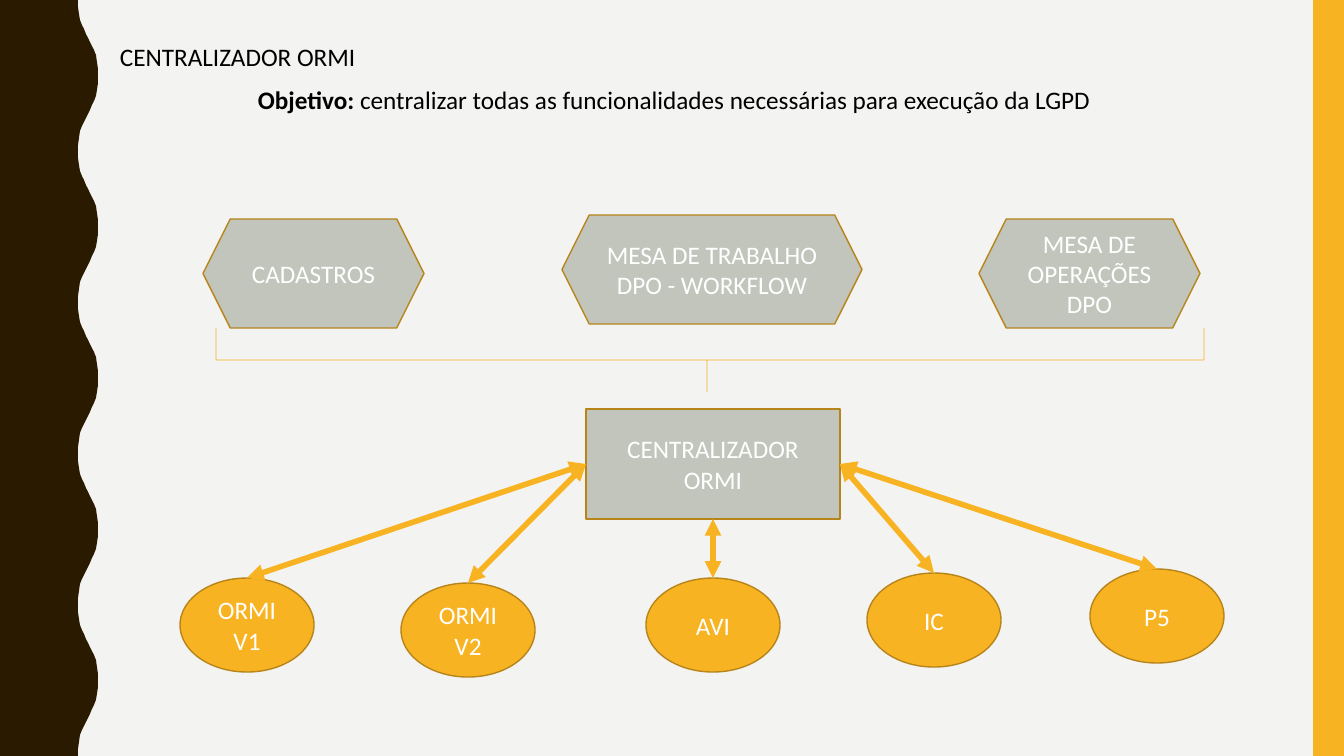
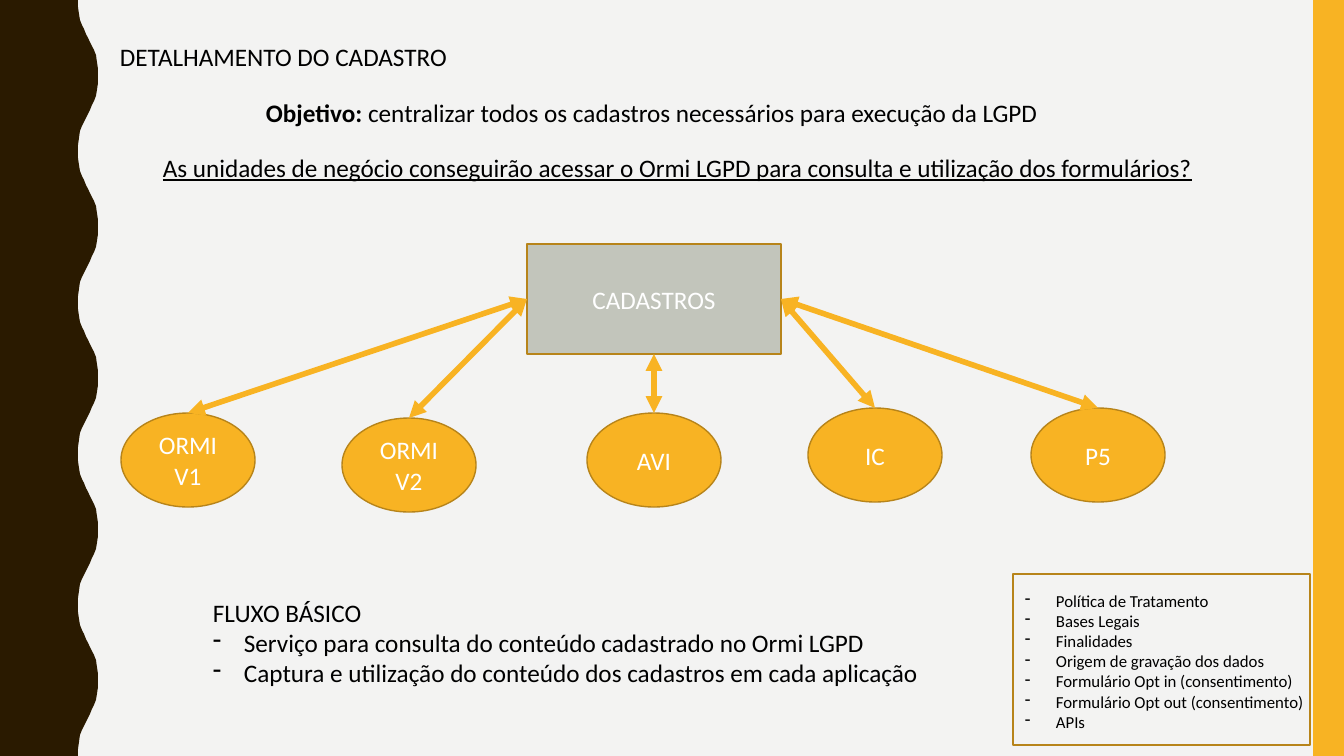
from pptx import Presentation
from pptx.dml.color import RGBColor
from pptx.enum.shapes import MSO_CONNECTOR as CONN, MSO_SHAPE as SHAPE
from pptx.enum.text import MSO_ANCHOR as ANCHOR, PP_ALIGN as ALIGN
from pptx.oxml.ns import qn
from pptx.util import Emu, Pt
from lxml.etree import SubElement

PX = 914400 / 100.8
WIDTH, HEIGHT = 1344, 756
PAPER, BROWN, YELLOW = "F3F3F2", "2A1A00", "F8B323"
GREY, GOLD, WHITE, BLACK = "C2C5BB", "B7841A", "FFFFFF", "000000"
FONT = "Calibri"
WAVE_X = (78, 78, 79, 80, 82, 84, 86, 88, 90, 92, 94, 96, 97, 98)
WAVE_Y = (0, 7, 14, 20, 25, 29, 34, 38, 42, 46, 50, 55, 62, 69)
HALF_WAVES = 10
HUB_W, HUB_H = 254, 110
NODE_W, NODE_H = 134, 94
TOP, LEFT, BOTTOM, RIGHT = range(4)
NODES = (
    ("ORMI V1", -406, 169, LEFT),
    ("ORMI V2", -185, 174, LEFT),
    ("AVI", 60, 169, BOTTOM),
    ("IC", 281, 164, RIGHT),
    ("P5", 504, 164, RIGHT),
)


def px(n):
    return Emu(round(n * PX))


def rgb(color):
    return RGBColor.from_string(color)


def write(tf, text, lead="", size=18, color=BLACK, underline=None, align=ALIGN.LEFT):
    for i, line in enumerate(text.split("\n")):
        p = tf.paragraphs[0] if i == 0 else tf.add_paragraph()
        p.alignment = align
        if line.startswith("- "):
            line = line[2:]
            pPr = p._p.get_or_add_pPr()
            pPr.set("marL", str(px(31)))
            pPr.set("indent", str(px(-31)))
            SubElement(pPr, qn("a:buChar"), char="-")
        for part, bold in ((lead, True), (line, False)):
            if part:
                r = p.add_run()
                r.text = part
                r.font.name = FONT
                r.font.size = Pt(size)
                r.font.bold = bold
                r.font.underline = underline
                r.font.color.rgb = rgb(color)


def paint(sp, fill=None, line=None, width=1):
    sp.shadow.inherit = False
    if fill:
        sp.fill.solid()
        sp.fill.fore_color.rgb = rgb(fill)
    else:
        sp.fill.background()
    if line:
        sp.line.color.rgb = rgb(line)
        sp.line.width = Pt(width)
    else:
        sp.line.fill.background()


def add_shape(s, kind, x, y, w, h, fill=None, line=None, width=1):
    sp = s.shapes.add_shape(kind, px(x), px(y), px(w), px(h))
    paint(sp, fill, line, width)
    return sp


def add_label(s, kind, x, y, w, h, text, fill=GREY):
    sp = add_shape(s, kind, x, y, w, h, fill, GOLD)
    sp.text_frame.word_wrap = True
    sp.text_frame.vertical_anchor = ANCHOR.MIDDLE
    write(sp.text_frame, text, color=WHITE, align=ALIGN.CENTER)
    return sp


def add_text(s, x, y, w, h, text, **fmt):
    tf = s.shapes.add_textbox(px(x), px(y), px(w), px(h)).text_frame
    tf.word_wrap = False
    write(tf, text, **fmt)


def add_double_arrow(s, node, hub, side):
    c = s.shapes.add_connector(CONN.STRAIGHT, 0, 0, 0, 0)
    c.begin_connect(node, TOP)
    c.end_connect(hub, side)
    c.line.color.rgb = rgb(YELLOW)
    c.line.width = Pt(4)
    ln = c.line._get_or_add_ln()
    for end in ("a:headEnd", "a:tailEnd"):
        SubElement(ln, qn(end), type="triangle")
    SubElement(c._element.spPr, qn("a:effectLst"))


def add_wave(s):
    step = HEIGHT / HALF_WAVES
    points = []
    for k in range(HALF_WAVES):
        for x, y in zip(WAVE_X, WAVE_Y):
            edge = WAVE_X[0] + WAVE_X[-1] - x if k % 2 else x
            points.append((edge, k * step + y))
    points += [(WAVE_X[0], HEIGHT), (0, HEIGHT)]
    fb = s.shapes.build_freeform(0, 0, scale=PX)
    fb.add_line_segments(points, close=True)
    paint(fb.convert_to_shape(), BROWN)


def add_slide(prs, title):
    s = prs.slides.add_slide(prs.slide_layouts[6])
    add_wave(s)
    add_shape(s, SHAPE.RECTANGLE, 1313, 0, 31, HEIGHT, YELLOW)
    add_text(s, 110, 36, 403, 40, title)
    return s


def add_hub(s, x, y, text, last_lift=0):
    hub = add_label(s, SHAPE.RECTANGLE, x, y, HUB_W, HUB_H, text)
    nodes = []
    for label, dx, dy, side in NODES:
        lift = last_lift if label == NODES[-1][0] else 0
        node = add_label(s, SHAPE.OVAL, x + dx, y + dy - lift, NODE_W, NODE_H, label, YELLOW)
        nodes.append((node, side))
    for node, side in nodes:
        add_double_arrow(s, node, hub, side)


def add_centralizer(prs):
    s = add_slide(prs, "CENTRALIZADOR ORMI")
    add_text(s, 248, 79, 877, 40,
             "centralizar todas as funcionalidades necessárias para execução da LGPD",
             lead="Objetivo: ")
    add_hub(s, 586, 409, "CENTRALIZADOR ORMI", last_lift=4)
    for x, y, w, text in (
        (203, 219, 221, "CADASTROS"),
        (562, 215, 300, "MESA DE TRABALHO DPO - WORKFLOW"),
        (979, 219, 221, "MESA DE OPERAÇÕES DPO"),
    ):
        add_label(s, SHAPE.HEXAGON, x, y, w, 109, text)
    brace = add_shape(s, SHAPE.RIGHT_BRACE, 678, -134, 64, 988, line=YELLOW, width=0.5)
    brace.rotation = 90
    brace.adjustments[0] = 0
    brace.adjustments[1] = 0.503


def add_registry(prs):
    s = add_slide(prs, "DETALHAMENTO DO CADASTRO")
    add_text(s, 256, 92, 825, 40,
             "centralizar todos os cadastros necessários para execução da LGPD",
             lead="Objetivo: ")
    add_text(s, 153, 147, 1075, 40,
             "As unidades de negócio conseguirão acessar o Ormi LGPD para consulta "
             "e utilização dos formulários?", underline=True)
    add_hub(s, 527, 244, "CADASTROS")
    add_text(s, 203, 592, 735, 102,
             "FLUXO BÁSICO\n"
             "- Serviço para consulta do conteúdo cadastrado no Ormi LGPD\n"
             "- Captura e utilização do conteúdo dos cadastros em cada aplicação")
    forms = add_shape(s, SHAPE.RECTANGLE, 1013, 574, 297, 171, line=GOLD)
    tf = forms.text_frame
    tf.word_wrap = True
    tf.vertical_anchor = ANCHOR.MIDDLE
    tf.margin_left, tf.margin_right = px(12), 0
    tf.margin_top, tf.margin_bottom = px(8), px(5)
    write(tf,
          "- Política de Tratamento\n"
          "- Bases Legais\n"
          "- Finalidades\n"
          "- Origem de gravação dos dados\n"
          "- Formulário Opt in (consentimento)\n"
          "- Formulário Opt out (consentimento)\n"
          "- APIs", size=12)


def main():
    prs = Presentation()
    prs.slide_width, prs.slide_height = px(WIDTH), px(HEIGHT)
    fill = prs.slide_master.background.fill
    fill.solid()
    fill.fore_color.rgb = rgb(PAPER)
    add_centralizer(prs)
    add_registry(prs)
    prs.save("out.pptx")


if __name__ == "__main__":
    main()
